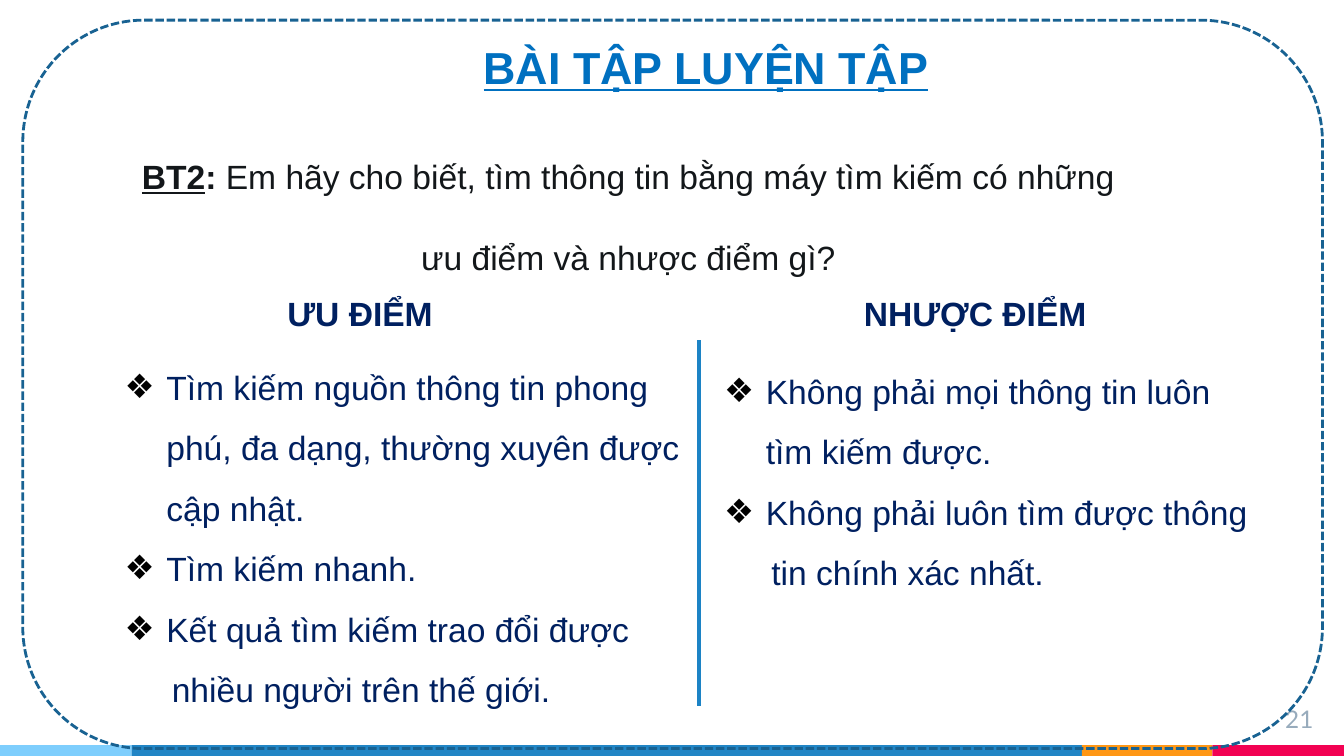
import itertools

import pptx
import pptx.dml.color
import pptx.enum.dml
import pptx.enum.shapes
import pptx.enum.text
import pptx.oxml
import pptx.oxml.ns
import pptx.util
from lxml import etree

WIDTH = 10
HEIGHT = WIDTH * 9 / 16
NAVY, INK = "002060", "13171A"
HEADING_TOP = 2.13
STRIP = [("7ECEFD", 0.98), ("2185C5", 7.07), ("FF9715", 0.97), ("F20253", 0.98)]
ADVANTAGES = [
    ("Tìm kiếm nguồn thông tin phong phú, đa dạng, thường xuyên được cập nhật.", True),
    ("Tìm kiếm nhanh.", True),
    ("Kết quả tìm kiếm trao đổi được", True),
    ("nhiều người trên thế giới.", False),
]
DRAWBACKS = [
    ("Không phải mọi thông tin luôn tìm kiếm được.", True),
    ("Không phải luôn tìm được thông", True),
    ("tin chính xác nhất.", False),
]


def color(code):
    """Return the colour for a hex string."""
    return pptx.dml.color.RGBColor.from_string(code)


def inches(*lengths):
    """Convert lengths in inches to slide units."""
    return [pptx.util.Inches(length) for length in lengths]


def style(span, code, size=18, bold=False, underline=False, font="Arial"):
    """Format one run of text."""
    span.font.name = font
    span.font.size = pptx.util.Pt(size)
    span.font.bold = bold
    span.font.underline = underline
    span.font.color.rgb = color(code)


def add_text(page, area, lines, wrap=False):
    """Add a text box with one paragraph per line and return it."""
    box = page.shapes.add_textbox(*inches(*area))
    frame = box.text_frame
    frame.text = "\n".join(lines)
    frame.word_wrap = wrap
    frame.auto_size = pptx.enum.text.MSO_AUTO_SIZE.SHAPE_TO_FIT_TEXT
    return box


def add_heading(page, area, text, code, size=18, underline=False):
    """Add a single bold line."""
    box = add_text(page, area, [text])
    style(box.text_frame.paragraphs[0].runs[0], code, size, True, underline)


def add_question(page):
    """Add the centred exercise question with its bold label."""
    lines = ["BT2", "ưu điểm và nhược điểm gì?"]
    box = add_text(page, (0.92, 0.81, 7.51, 1.31), lines)
    first, second = box.text_frame.paragraphs
    for text in (": ", "Em hãy cho biết, tìm thông tin bằng máy tìm kiếm có những"):
        first.add_run().text = text
    label, colon, question = first.runs
    style(label, INK, bold=True, underline=True)
    style(colon, INK, bold=True)
    style(question, INK)
    style(second.runs[0], INK)
    for para in (first, second):
        para.alignment = pptx.enum.text.PP_ALIGN.CENTER
        para.line_spacing = 2.0


def indent(para, margin, first_line):
    """Set the left margin and first-line indent of a paragraph."""
    properties = para._p.get_or_add_pPr()
    properties.set("marL", str(pptx.util.Inches(margin)))
    properties.set("indent", str(pptx.util.Inches(first_line)))
    return properties


def add_bullet(para):
    """Give a paragraph a black diamond bullet with a hanging indent."""
    properties = indent(para, 0.31, -0.31)
    tint = etree.SubElement(properties, pptx.oxml.ns.qn("a:buClr"))
    etree.SubElement(tint, pptx.oxml.ns.qn("a:srgbClr"), val="000000")
    etree.SubElement(properties, pptx.oxml.ns.qn("a:buFont"), typeface="Arial")
    etree.SubElement(properties, pptx.oxml.ns.qn("a:buChar"), char="❖")


def add_list(page, area, items):
    """Add a column of bullets and their continuation lines."""
    box = add_text(page, area, [text for text, _ in items], wrap=True)
    for para, (_, bulleted) in zip(box.text_frame.paragraphs, items):
        para.line_spacing = 1.5
        if bulleted:
            add_bullet(para)
        else:
            indent(para, 0.35, 0)
        style(para.runs[0], NAVY)


def add_strip(page):
    """Add the coloured bands along the bottom edge."""
    widths = [width for _, width in STRIP]
    for (code, width), left in zip(STRIP, itertools.accumulate(widths, initial=0)):
        area = inches(left, HEIGHT - 0.08, width, 0.08)
        band = page.shapes.add_shape(pptx.enum.shapes.MSO_SHAPE.RECTANGLE, *area)
        band.shadow.inherit = False
        band.fill.solid()
        band.fill.fore_color.rgb = color(code)
        band.line.fill.background()


def add_page_number(page):
    """Add the slide number at the lower right."""
    box = add_text(page, (9.27, 5.14, 0.6, 0.34), ["21"], wrap=True)
    frame = box.text_frame
    frame.auto_size = pptx.enum.text.MSO_AUTO_SIZE.NONE
    frame.margin_top = frame.margin_bottom = pptx.util.Inches(0.1)
    frame.paragraphs[0].alignment = pptx.enum.text.PP_ALIGN.RIGHT
    style(frame.paragraphs[0].runs[0], "97ABBC", 13, font="Lato")


def add_divider(page):
    """Add the vertical line between the two columns."""
    straight = pptx.enum.shapes.MSO_CONNECTOR.STRAIGHT
    divider = page.shapes.add_connector(straight, *inches(5.2, 2.53, 5.2, 5.25))
    divider.line.color.rgb = color("1C83C5")
    divider.line.width = pptx.util.Pt(2.25)
    etree.SubElement(divider._element.spPr, pptx.oxml.ns.qn("a:effectLst"))


def add_border(page):
    """Add the dashed rounded border."""
    rounded = pptx.enum.shapes.MSO_SHAPE.ROUNDED_RECTANGLE
    border = page.shapes.add_shape(rounded, *inches(0.17, 0.15, 9.67, 5.42))
    border.shadow.inherit = False
    border.fill.background()
    border.line.color.rgb = color("186292")
    border.line.width = pptx.util.Pt(1.5)
    border.line.dash_style = pptx.enum.dml.MSO_LINE.SQUARE_DOT


def main():
    """Build the exercise slide and save it."""
    deck = pptx.Presentation()
    deck.slide_width, deck.slide_height = inches(WIDTH, HEIGHT)
    page = deck.slides.add_slide(deck.slide_layouts[6])
    add_strip(page)
    add_page_number(page)
    add_heading(page, (3.5, 0.25, 3.55, 0.5), "BÀI TẬP LUYỆN TẬP", "0070C0", 24, True)
    add_question(page)
    add_divider(page)
    add_heading(page, (2.04, HEADING_TOP, 1.3, 0.4), "ƯU ĐIỂM", NAVY)
    add_heading(page, (6.33, HEADING_TOP, 1.87, 0.4), "NHƯỢC ĐIỂM", NAVY)
    add_list(page, (0.83, 2.53, 4.37, 2.83), ADVANTAGES)
    add_list(page, (5.29, 2.56, 4.21, 1.92), DRAWBACKS)
    add_border(page)
    deck.save("out.pptx")


if __name__ == "__main__":
    main()
